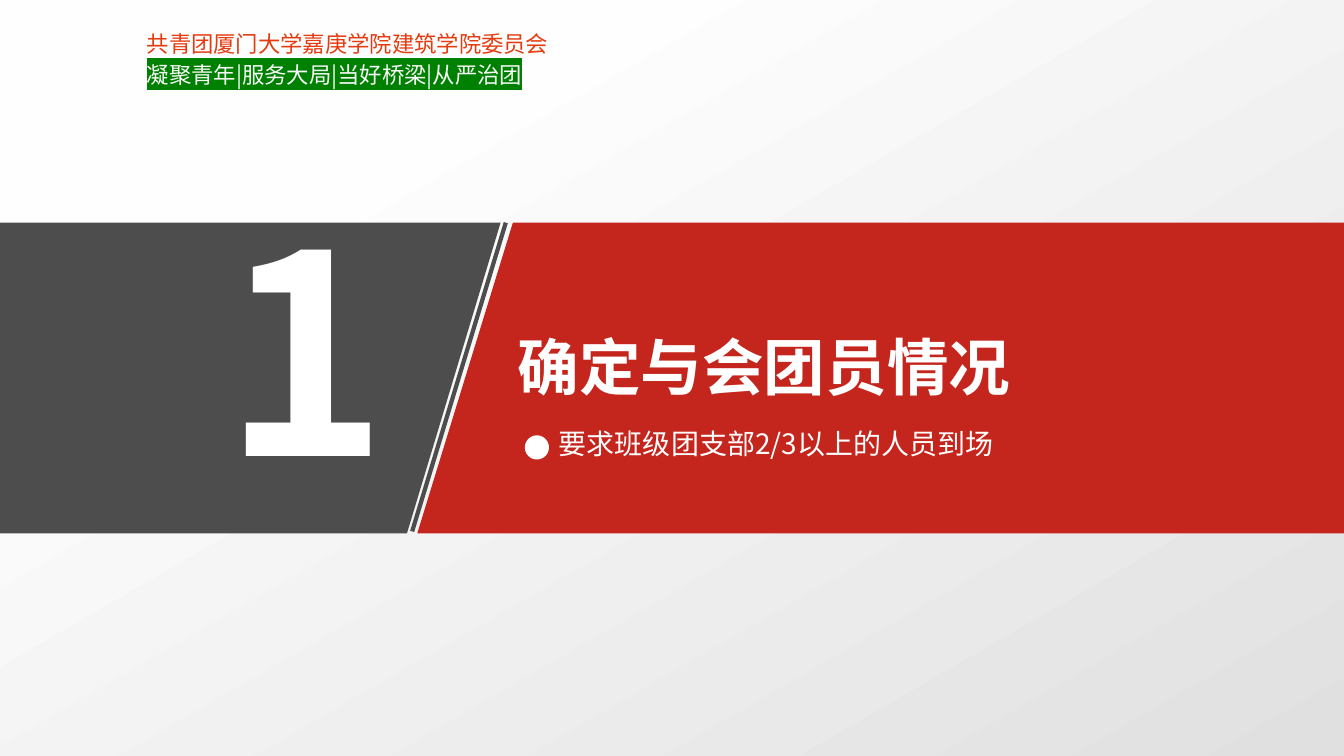
from dataclasses import dataclass

from lxml.etree import SubElement
from pptx import Presentation
from pptx.dml.color import RGBColor
from pptx.enum.lang import MSO_LANGUAGE_ID as Language
from pptx.enum.shapes import MSO_CONNECTOR as Connector, MSO_SHAPE as Preset
from pptx.enum.text import MSO_AUTO_SIZE as AutoSize, PP_ALIGN as Align
from pptx.oxml import parse_xml
from pptx.oxml.ns import nsdecls, qn
from pptx.util import Cm, Pt

FONT = "Noto Sans CJK SC"
WHITE, RED, GRAY = "FFFFFF", "C4261D", "4D4D4D"
WIDTH, HEIGHT = 33.88, 19.05
BAND_TOP, BAND_BOTTOM = 5.61, 13.44


@dataclass
class Line:
    text: str
    color: str = WHITE
    highlight: str = ""


@dataclass
class Label:
    box: tuple[float, float, float, float]
    lines: list[Line]
    font_format: dict
    paragraph_format: dict
    wrap: bool = True


@dataclass
class Panel:
    points: list[tuple[float, float]]
    color: str


PANELS = [
    Panel([(12.93, BAND_TOP), (WIDTH, BAND_TOP), (WIDTH, BAND_BOTTOM), (10.52, BAND_BOTTOM)], RED),
    Panel([(12.62, BAND_TOP), (10.26, BAND_BOTTOM), (0, BAND_BOTTOM), (0, BAND_TOP)], GRAY),
]
LABELS = [
    Label((12.8, 8.38, 20.35, 2.13), [Line("确定与会团员情况")],
          {"size": Pt(44), "bold": True}, {"line_spacing": 0.89}),
    Label((5.38, 5.38, 4.88, 8.76), [Line("1")],
          {"size": Pt(199), "bold": True}, {"line_spacing": 0.89}, wrap=False),
    Label((13.84, 10.72, 16.89, 1.12), [Line("要求班级团支部2/3以上的人员到场")],
          {"size": Pt(20)}, {"line_spacing": 0.89}),
    Label((3.45, 0.74, 15.19, 1.83),
          [Line("共青团厦门大学嘉庚学院建筑学院委员会", "E43C11"),
           Line("凝聚青年|服务大局|当好桥梁|从严治团", "F8F8F8", "008000")],
          {"size": Pt(16)},
          {"line_spacing": 0.85, "space_after": Pt(6), "alignment": Align.JUSTIFY}),
]


def rgb(color: str) -> RGBColor:
    return RGBColor.from_string(color)


def apply_format(target, values: dict) -> None:
    for name, value in values.items():
        setattr(target, name, value)


def paint_background(slide) -> None:
    fill = slide.background.fill
    fill.gradient()
    fill.gradient_angle = 300
    for stop, position, color in zip(fill.gradient_stops, (0.23, 1), ("FEFEFE", "E0E0E0")):
        stop.position = position
        stop.color.rgb = rgb(color)


def paint_shape(shape, color: str) -> None:
    shape.shadow.inherit = False
    shape.fill.solid()
    shape.fill.fore_color.rgb = rgb(color)
    shape.line.fill.background()


def add_panel(slide, panel: Panel) -> None:
    start, *others = [(Cm(x), Cm(y)) for x, y in panel.points]
    builder = slide.shapes.build_freeform(*start)
    builder.add_line_segments(others, close=True)
    paint_shape(builder.convert_to_shape(), panel.color)


def add_divider(slide) -> None:
    ends = (Cm(12.75), Cm(BAND_TOP), Cm(10.39), Cm(13.39))
    divider = slide.shapes.add_connector(Connector.STRAIGHT, *ends)
    divider.line.color.rgb = rgb(GRAY)
    divider.line.width = Pt(3)
    SubElement(divider._element.spPr, qn("a:effectLst"))


def add_line(paragraph, line: Line, label: Label) -> None:
    apply_format(paragraph, label.paragraph_format)
    run = paragraph.add_run()
    run.text = line.text
    apply_format(run.font, {"name": FONT, "language_id": Language.SIMPLIFIED_CHINESE,
                            **label.font_format})
    run.font.color.rgb = rgb(line.color)
    properties = run._r.get_or_add_rPr()
    latin = properties.find(qn("a:latin"))
    latin.addnext(parse_xml(f'<a:ea {nsdecls("a")} typeface="{FONT}"/>'))
    if line.highlight:
        latin.addprevious(parse_xml(
            f'<a:highlight {nsdecls("a")}><a:srgbClr val="{line.highlight}"/></a:highlight>'))


def add_label(slide, label: Label) -> None:
    frame = slide.shapes.add_textbox(*map(Cm, label.box)).text_frame
    apply_format(frame, {"word_wrap": label.wrap, "auto_size": AutoSize.SHAPE_TO_FIT_TEXT})
    for index, line in enumerate(label.lines):
        paragraph = frame.add_paragraph() if index else frame.paragraphs[0]
        add_line(paragraph, line, label)


def main() -> None:
    presentation = Presentation()
    apply_format(presentation, {"slide_width": Cm(WIDTH), "slide_height": Cm(HEIGHT)})
    slide = presentation.slides.add_slide(presentation.slide_layouts[6])
    paint_background(slide)
    for panel in PANELS:
        add_panel(slide, panel)
    add_divider(slide)
    dot = slide.shapes.add_shape(Preset.OVAL, Cm(13.23), Cm(10.97), Cm(0.61), Cm(0.61))
    paint_shape(dot, WHITE)
    for label in LABELS:
        add_label(slide, label)
    presentation.save("out.pptx")


if __name__ == "__main__":
    main()
